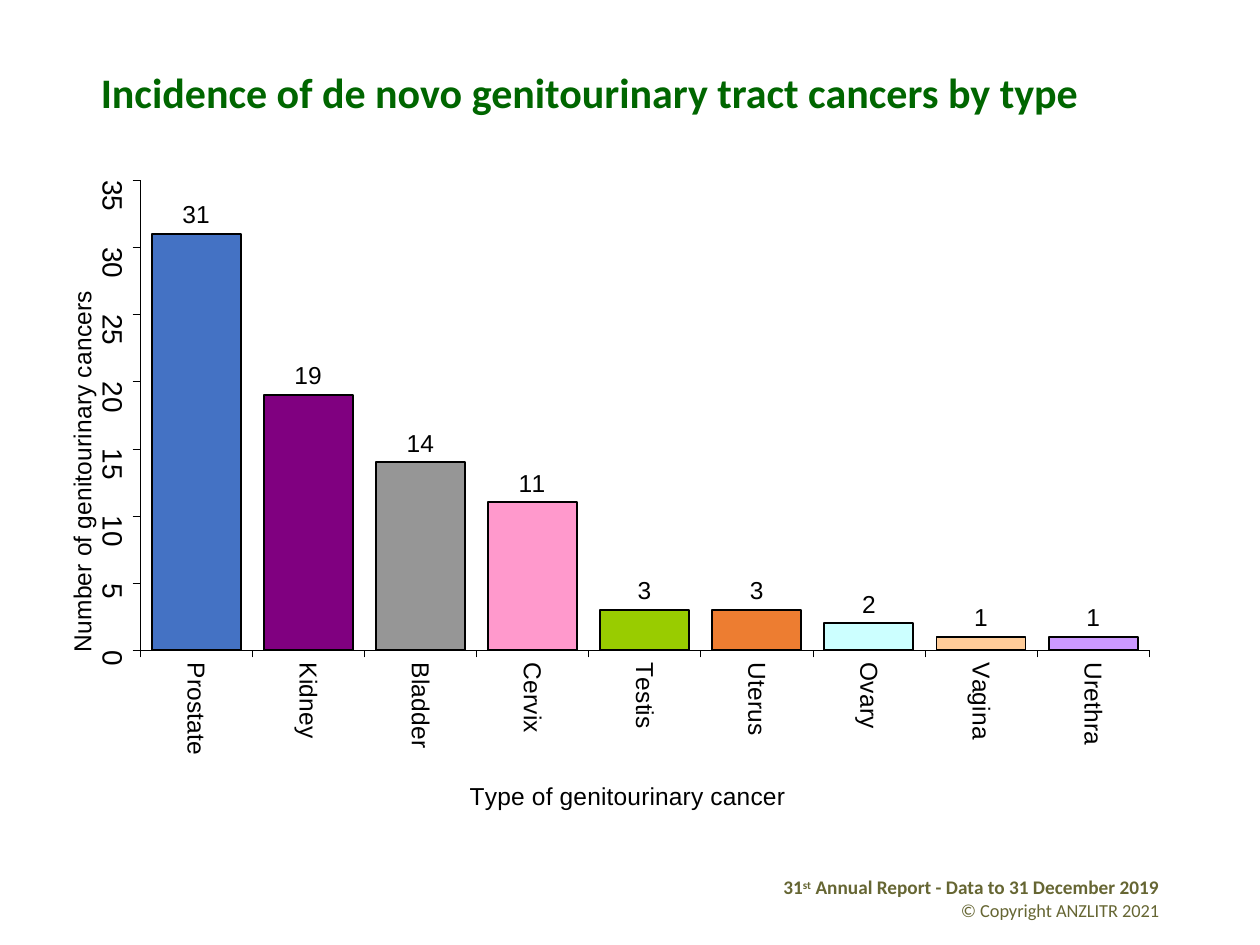
from lxml import etree
from pptx import Presentation
from pptx import util as u
from pptx.chart.data import CategoryChartData
from pptx.dml.color import RGBColor
from pptx.enum import chart as charts, text
from pptx.oxml.ns import qn

BLACK = RGBColor(0x00, 0x00, 0x00)
GREEN = RGBColor(0x00, 0x66, 0x00)
OLIVE = RGBColor(0x66, 0x66, 0x33)
WIDTH, HEIGHT = u.Inches(10), u.Inches(7.5)

# Cancer type, number of cases, bar colour
CANCERS = [
    ("Prostate", 31, RGBColor(0x44, 0x72, 0xC4)),
    ("Kidney", 19, RGBColor(0x80, 0x00, 0x80)),
    ("Bladder", 14, RGBColor(0x96, 0x96, 0x96)),
    ("Cervix", 11, RGBColor(0xFF, 0x99, 0xCC)),
    ("Testis", 3, RGBColor(0x99, 0xCC, 0x00)),
    ("Uterus", 3, RGBColor(0xED, 0x7D, 0x31)),
    ("Ovary", 2, RGBColor(0xCC, 0xFF, 0xFF)),
    ("Vagina", 1, RGBColor(0xFF, 0xCC, 0x99)),
    ("Urethra", 1, RGBColor(0xCC, 0x99, 0xFF)),
]


def share_box(left, top, width, height):
    """Turn shares of the slide into a box."""
    return (int(WIDTH * left), int(HEIGHT * top),
            int(WIDTH * width), int(HEIGHT * height))


def style_font(font, name, size, color, bold=False):
    font.name, font.size, font.bold = name, u.Pt(size), bold
    font.color.rgb = color


def set_layout(element, **values):
    """Give a chart part a manual layout in shares of the chart."""
    old = element.find(qn("c:layout"))
    if old is not None:
        element.remove(old)
    layout = etree.Element(qn("c:layout"))
    manual = etree.SubElement(layout, qn("c:manualLayout"))
    for tag, value in values.items():
        etree.SubElement(manual, qn("c:" + tag)).set("val", str(value))
    has_text = element.find(qn("c:tx")) is not None
    element.insert(1 if has_text else 0, layout)


def rotate(element, degrees):
    body = next(element.iter(qn("a:bodyPr")))
    body.set("rot", str(degrees * 60000))
    body.set("vert", "horz")


def add_title(page, box):
    title = page.shapes.title
    title.left, title.top, title.width, title.height = box
    frame = title.text_frame
    frame.text = "Incidence of de novo genitourinary tract cancers by type"
    frame.vertical_anchor = text.MSO_ANCHOR.MIDDLE
    para = frame.paragraphs[0]
    para.alignment = text.PP_ALIGN.LEFT
    para.line_spacing = 0.9
    style_font(para.runs[0].font, "Calibri", 24, GREEN, True)


def style_axis(axis, title, size, turn, left, top):
    axis.has_major_gridlines = False
    axis.major_tick_mark = charts.XL_TICK_MARK.OUTSIDE
    axis.format.line.color.rgb = BLACK
    axis.format.line.width = u.Pt(0.25)
    style_font(axis.tick_labels.font, "Arial", size, BLACK)
    rotate(axis._element.find(qn("c:txPr")), 90)

    frame = axis.axis_title.text_frame
    frame.text = title
    style_font(frame.paragraphs[0].runs[0].font, "Arial", 14, BLACK)
    heading = axis.axis_title._element
    rotate(heading, turn)
    set_layout(heading, xMode="edge", yMode="edge", x=left, y=top)


def add_incidence_chart(page, box):
    data = CategoryChartData(number_format="0")
    data.categories = [name for name, _, _ in CANCERS]
    data.add_series("Series 1", [count for _, count, _ in CANCERS])
    chart = page.shapes.add_chart(
        charts.XL_CHART_TYPE.COLUMN_CLUSTERED, *box, data).chart
    chart.has_legend = chart.has_title = False
    style_font(chart.font, "Arial", 14, BLACK)

    # Axes
    style_axis(chart.category_axis, "Type of genitourinary cancer",
               14, 0, 0.37, 0.93)
    values = chart.value_axis
    style_axis(values, "Number of genitourinary cancers", 16, -90, 0.01, 0.19)
    values.minimum_scale, values.maximum_scale = 0, 35
    values.major_unit = 5
    values.tick_labels.number_format = "0"
    values.tick_labels.number_format_is_linked = False

    # Bars and their labels
    plot = chart.plots[0]
    plot.gap_width = 26
    plot.vary_by_categories = False
    series = plot.series[0]
    for index, (_, _, color) in enumerate(CANCERS):
        look = series.points[index].format
        look.fill.solid()
        look.fill.fore_color.rgb = color
        look.line.color.rgb = BLACK
        look.line.width = u.Pt(1.05)
    labels = series.data_labels
    labels.show_value = True
    labels.position = charts.XL_LABEL_POSITION.OUTSIDE_END
    labels.number_format = "0"
    labels.number_format_is_linked = False
    style_font(labels.font, "Arial", 14, BLACK)

    set_layout(next(chart._chartSpace.iter(qn("c:plotArea"))),
               layoutTarget="inner", xMode="edge", yMode="edge",
               x=0.08, y=0.03, w=0.9, h=0.71)


def add_footer(page, box):
    frame = page.shapes.add_textbox(*box).text_frame
    frame.word_wrap = True
    lines = [
        (["31", "st", " Annual Report - Data to 31 December 2019"], 11, True),
        (["© Copyright ANZLITR 2021"], 10.5, False),
    ]
    for index, (parts, size, bold) in enumerate(lines):
        para = frame.add_paragraph() if index else frame.paragraphs[0]
        para.alignment = text.PP_ALIGN.RIGHT
        for part in parts:
            span = para.add_run()
            span.text = part
            style_font(span.font, "Calibri", size, OLIVE, bold)
            if part == "st":
                span.font._element.set("baseline", "30000")


def main():
    deck = Presentation()
    deck.slide_width, deck.slide_height = WIDTH, HEIGHT
    page = deck.slides.add_slide(deck.slide_layouts[5])
    add_footer(page, share_box(0.59, 0.92, 0.34, 0.05))
    add_title(page, share_box(0.07, 0.05, 0.86, 0.1))
    add_incidence_chart(page, share_box(0.04, 0.17, 0.89, 0.7))
    deck.save("out.pptx")


if __name__ == "__main__":
    main()
